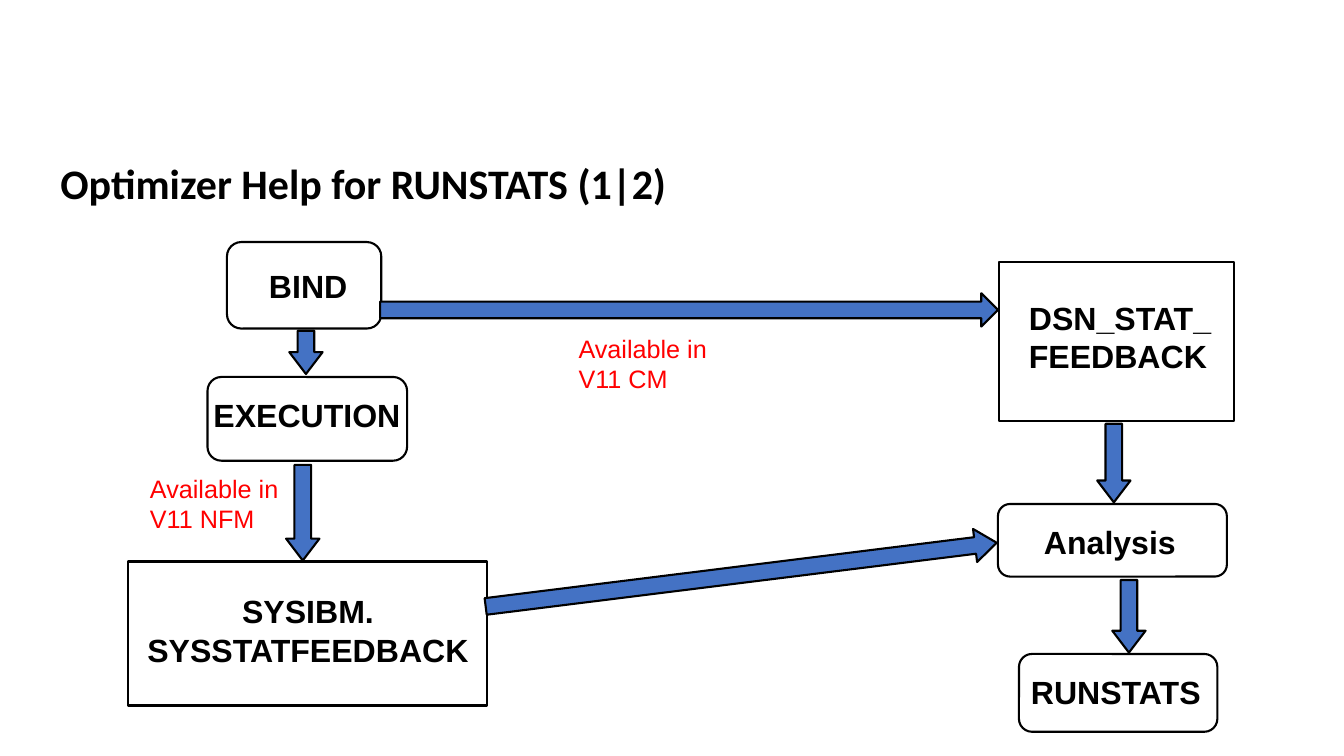
import pptx
import pptx.util
import pptx.dml.color
import pptx.enum.shapes
import pptx.enum.text

Cm = pptx.util.Cm
Pt = pptx.util.Pt
KIND = pptx.enum.shapes.MSO_SHAPE
ALIGN = pptx.enum.text.PP_ALIGN
ANCHOR = pptx.enum.text.MSO_ANCHOR

HUES = {"ink": "000000", "note": "FF0000", "arrow": "4472C4"}
FONTS = {
    "title": {"name": "Calibri", "size": Pt(30), "bold": True},
    "label": {"name": "Arial", "size": Pt(22.9), "bold": True},
    "note": {"name": "Arial", "size": Pt(18), "bold": False},
}
THICK = 0.84


def hue(key):
    return pptx.dml.color.RGBColor.from_string(HUES[key])


def put_text(slide, box, words, style, **form):
    frame = slide.shapes.add_textbox(*map(Cm, box)).text_frame
    frame.word_wrap = True
    para = frame.paragraphs[0]
    para.text = words
    for key, value in form.items():
        setattr(para, key, value)
    for run in para.runs:
        for key, value in FONTS[style].items():
            setattr(run.font, key, value)
        run.font.color.rgb = hue("note" if style == "note" else "ink")
    return frame


def put_shape(slide, kind, box, fill=None):
    shape = slide.shapes.add_shape(kind, *map(Cm, box))
    shape.shadow.inherit = False
    if fill:
        shape.fill.solid()
        shape.fill.fore_color.rgb = hue(fill)
    else:
        shape.fill.background()
    shape.line.color.rgb = hue("ink")
    shape.line.width = Pt(1.5)
    return shape


def put_arrow(slide, mid, size, turn=90, head=0.655):
    """Block arrow centred on mid, turned clockwise by turn degrees."""
    wide = size
    box = (mid[0] - wide / 2, mid[1] - THICK / 2, wide, THICK)
    arrow = put_shape(slide, KIND.RIGHT_ARROW, box, "arrow")
    arrow.adjustments[1] = head
    arrow.rotation = turn


def put_flow(slide, box, nodes, drops):
    """Column of labelled nodes and the arrows that drop between them."""
    left, top = box[:2]
    for kind, frame, label, words, align in nodes:
        for area in (frame, label):
            area[0] += left
            area[1] += top
        put_shape(slide, kind, frame)
        put_text(slide, label, words, "label", alignment=align)
    for x, y, size in drops:
        put_arrow(slide, (left + x, top + y), size)


def put_title(slide, box):
    frame = put_text(slide, box, "Optimizer Help for RUNSTATS (1|2)",
                     "title", line_spacing=0.9)
    frame.vertical_anchor = ANCHOR.MIDDLE


def put_left(slide, box):
    nodes = [
        (KIND.ROUNDED_RECTANGLE, [2.49, 0, 3.89, 2.18],
         [3.3, 0.5, 3.05, 1.27], "BIND", ALIGN.LEFT),
        (KIND.ROUNDED_RECTANGLE, [2, 3.4, 5.03, 2.11],
         [1.9, 3.73, 5.97, 1.27], "EXECUTION", ALIGN.LEFT),
        (KIND.RECTANGLE, [0, 8.05, 9.04, 3.63],
         [0.05, 8.68, 8.97, 2.26], "SYSIBM.\nSYSSTATFEEDBACK", ALIGN.CENTER),
    ]
    put_flow(slide, box, nodes, [(4.48, 2.78, 1.09), (4.4, 6.82, 2.41)])
    put_text(slide, (box[0] + 0.3, box[1] + 5.69, 4.42, 1.83),
             "Available in V11 NFM", "note")


def put_right(slide, box):
    nodes = [
        (KIND.RECTANGLE, [0.02, 0, 5.92, 4.01],
         [0.53, 0.79, 5.41, 2.26], "DSN_STAT_FEEDBACK", ALIGN.LEFT),
        (KIND.ROUNDED_RECTANGLE, [0, 6.1, 5.77, 1.83],
         [0.91, 6.43, 3.99, 1.27], "Analysis", ALIGN.LEFT),
        (KIND.ROUNDED_RECTANGLE, [0.53, 9.88, 5, 1.96],
         [0.58, 10.21, 5.41, 1.27], "RUNSTATS", ALIGN.LEFT),
    ]
    put_flow(slide, box, nodes, [(2.92, 5.07, 1.98), (3.3, 8.93, 1.83)])


def put_links(slide, box):
    """Arrows from the left column to the right one."""
    left, top, wide = box[:3]
    put_arrow(slide, (left + wide / 2, top + 0.42), wide, 0, 0.5)
    put_arrow(slide, (left + 9.1, top + 7.09), 12.98, 352.9)
    put_text(slide, (left + 4.75, top + 0.89, 4.27, 1.83),
             "Available in V11 CM", "note")


def main():
    deck = pptx.Presentation()
    deck.slide_width, deck.slide_height = Cm(33.87), Cm(19.05)
    slide = deck.slides.add_slide(deck.slide_layouts[6])
    # Heading
    put_title(slide, (1.27, 3.58, 27.23, 2.21))
    # Flow chart
    put_left(slide, (3.23, 6.1, 9.04, 11.68))
    put_right(slide, (25.15, 6.6, 5.94, 11.84))
    put_links(slide, (9.58, 7.39, 15.57, 7.5))
    deck.save("out.pptx")


if __name__ == "__main__":
    main()
